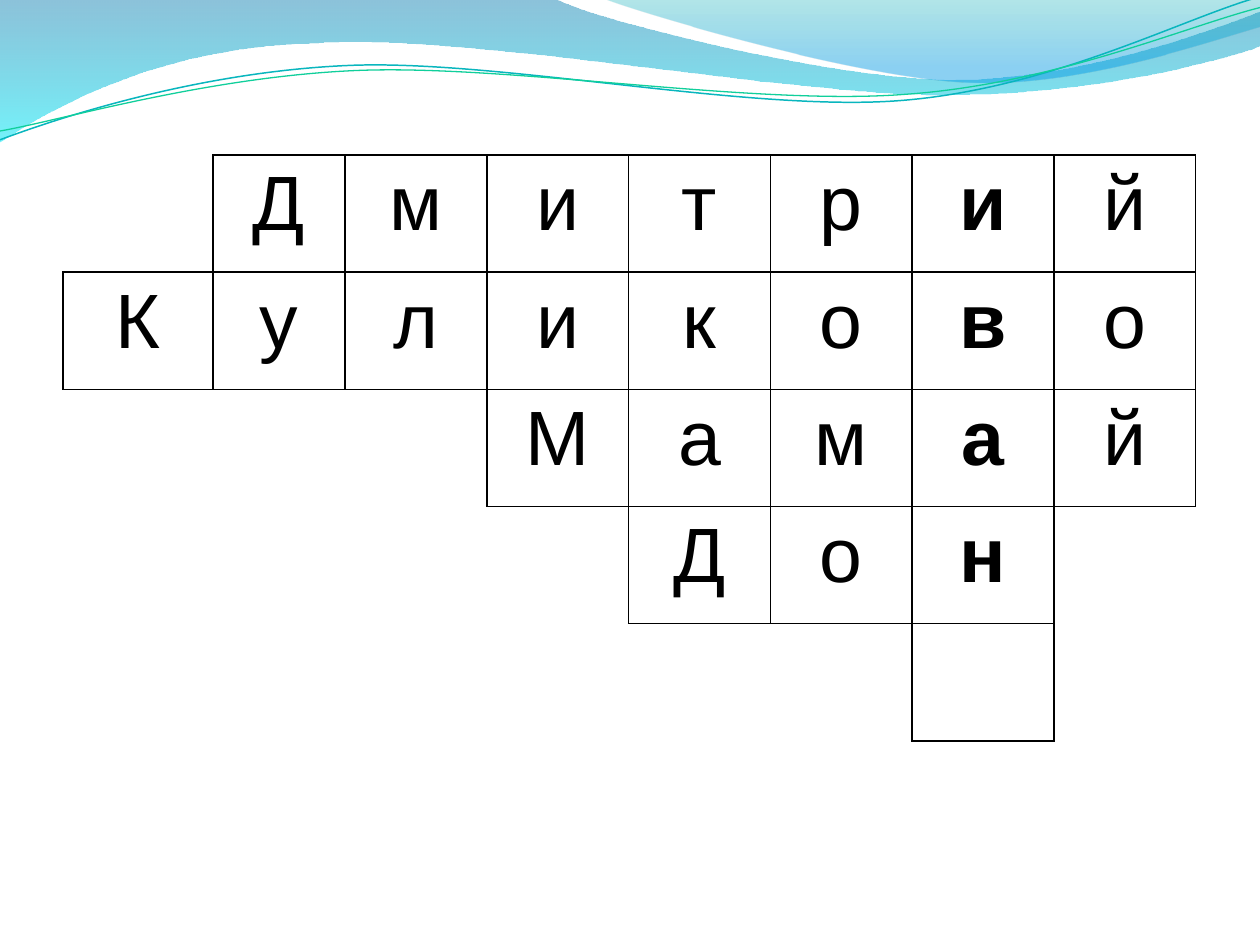
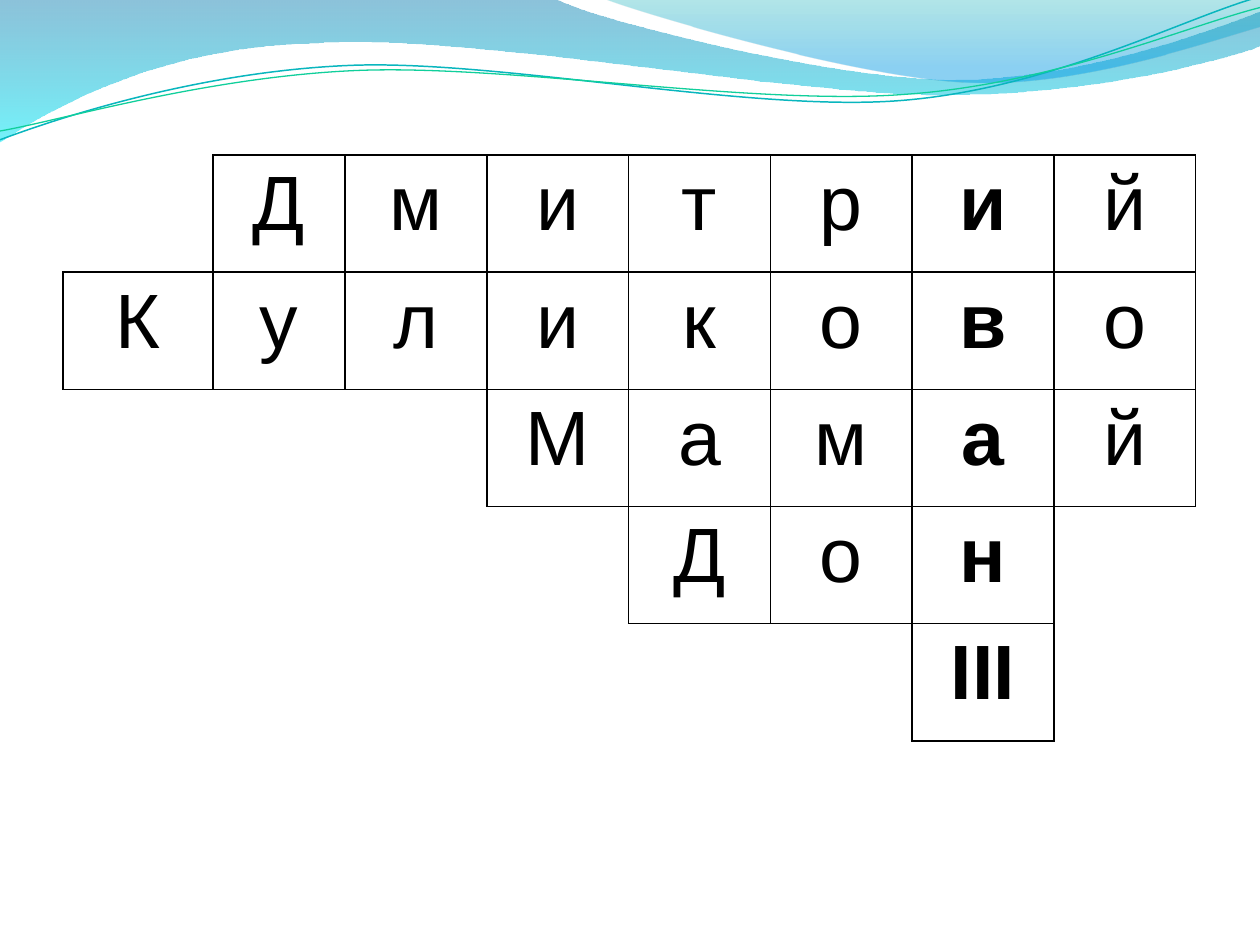
from lxml.etree import SubElement
from pptx import Presentation
from pptx.dml.color import RGBColor
from pptx.enum.text import PP_ALIGN
from pptx.oxml.ns import qn
from pptx.util import Inches, Pt

COLORS = {
    "ink": "000000",
    "deep_blue": "0079AD",
    "cyan": "00E9F7",
    "teal": "00ABB4",
    "sky": "0099E4",
    "teal_line": "09B6BE",
    "green_line": "10CF9B",
}
FONT = "Arial"
BLANK_LAYOUT = 6

# Each outline is a start point, then straight (1 point) or Bezier (3 points) pieces.
LEFT_WAVE = [
    [(0, 0)], [(4.4, -0.01)],
    [(4.76, 0.17), (6.64, 0.63), (7.58, 0.63)],
    [(8.53, 0.63), (9.58, 0.26), (10, 0.09)],
    [(10.01, 0.36)],
    [(9.83, 0.44), (8.7, 0.76), (7.46, 0.75)],
    [(6.22, 0.75), (3.82, 0.28), (2.57, 0.34)],
    [(1.29, 0.36), (0.46, 0.83), (-0.01, 1.13)],
    [(0, 0)],
]
RIGHT_WAVE = [
    [(4.79, -0.01)],
    [(5.09, 0.11), (6.82, 0.62), (7.69, 0.65)],
    [(8.56, 0.69), (9.61, 0.32), (10, 0.21)],
    [(10, 0)], [(4.79, -0.01)],
]
TEAL_CURVE = [
    [(0, 1.11)],
    [(0.48, 0.93), (1.58, 0.57), (2.77, 0.52)],
    [(3.95, 0.47), (5.93, 0.89), (7.13, 0.8)],
    [(8.33, 0.71), (9.38, 0.15), (9.98, -0.02)],
]
GREEN_CURVE = [
    [(0, 1.04)],
    [(0.47, 0.96), (1.64, 0.61), (2.83, 0.56)],
    [(4.03, 0.51), (5.97, 0.84), (7.17, 0.75)],
    [(8.36, 0.67), (9.41, 0.21), (10, 0.06)],
]

# First column of each answer, and the answer itself.
ANSWERS = [(1, "Дмитрий"), (0, "Куликово"), (3, "Мамай"), (4, "Дон")]
KEY_COLUMN = 6
GRID_LEFT, GRID_TOP, GRID_WIDTH = 0.5, 1.23, 8.99
FIRST_WIDTHS = [1.19, 1.05]
EQUAL_COLUMNS = 6
COLUMN_WIDTHS = FIRST_WIDTHS + [(GRID_WIDTH - sum(FIRST_WIDTHS)) / EQUAL_COLUMNS] * EQUAL_COLUMNS
ROW_HEIGHT = 0.93
SIDES = {"a:lnL": (0, -1), "a:lnR": (0, 1), "a:lnT": (-1, 0), "a:lnB": (1, 0)}


def rgb(name):
    return RGBColor.from_string(COLORS[name])


def add_outline(slide, outline, close):
    """Build a freeform through the end points, then bend its Bezier pieces."""
    ends = [(Inches(x), Inches(y)) for x, y in (piece[-1] for piece in outline)]
    builder = slide.shapes.build_freeform(*ends[0])
    builder.add_line_segments(ends[1:], close=close)
    shape = builder.convert_to_shape()
    shape.shadow.inherit = False
    segments = list(shape.element.iter(qn("a:lnTo")))
    for segment, piece in zip(segments, outline[1:]):
        if len(piece) == 3:
            segment.tag = qn("a:cubicBezTo")
            for index, (x, y) in enumerate(piece[:2]):
                point = segment.makeelement(qn("a:pt"), {
                    "x": str(Inches(x) - shape.left), "y": str(Inches(y) - shape.top)})
                segment.insert(index, point)
    return shape


def add_wave(slide, outline, stops):
    """Draw a filled wave; stops are (position, colour name, opacity percent)."""
    shape = add_outline(slide, outline, close=True)
    shape.line.fill.background()
    shape.fill.gradient()
    shape.fill.gradient_angle = 270
    for gradient_stop, (position, color, _) in zip(shape.fill.gradient_stops, stops):
        gradient_stop.position = position
        gradient_stop.color.rgb = rgb(color)
    for color_element, (_, _, opacity) in zip(shape.element.iter(qn("a:srgbClr")), stops):
        SubElement(color_element, qn("a:alpha"), val=str(opacity * 1000))
    return shape


def add_curve(slide, outline, color, width):
    shape = add_outline(slide, outline, close=False)
    shape.fill.background()
    shape.line.color.rgb = rgb(color)
    shape.line.width = Pt(width)
    return shape


def decorate_layout(layout, slide):
    """Draw the waves on a slide and move them to the layout all slides share."""
    waves = [
        add_wave(slide, LEFT_WAVE, [(0, "deep_blue", 45), (1, "cyan", 55)]),
        add_wave(slide, RIGHT_WAVE, [(0, "teal", 30), (0.8, "sky", 45)]),
        add_curve(slide, TEAL_CURVE, "teal_line", 0.85),
        add_curve(slide, GREEN_CURVE, "green_line", 0.75),
    ]
    for placeholder in list(layout.placeholders):
        layout.shapes.element.remove(placeholder.element)
    for wave in waves:
        layout.shapes.element.append(wave.element)


def set_border(cell, side, visible):
    properties = cell._tc.get_or_add_tcPr()
    line = SubElement(properties, qn(side), w=str(Pt(1)))
    if visible:
        fill = SubElement(line, qn("a:solidFill"))
        SubElement(fill, qn("a:srgbClr"), val=COLORS["ink"])
    else:
        SubElement(line, qn("a:noFill"))


def write_letter(cell, letter, bold):
    paragraph = cell.text_frame.paragraphs[0]
    paragraph.text = letter
    paragraph.alignment = PP_ALIGN.CENTER
    paragraph.font.name = FONT
    paragraph.font.size = Pt(44)
    paragraph.font.bold = bold
    paragraph.font.color.rgb = rgb("ink")


def add_crossword(slide, last_letter):
    letters = {(row, start + offset): letter
               for row, (start, answer) in enumerate(ANSWERS)
               for offset, letter in enumerate(answer)}
    row_count = len(ANSWERS) + 1
    letters[row_count - 1, KEY_COLUMN] = last_letter

    table = slide.shapes.add_table(
        row_count, len(COLUMN_WIDTHS), Inches(GRID_LEFT), Inches(GRID_TOP),
        Inches(GRID_WIDTH), Inches(ROW_HEIGHT * row_count)).table
    table.first_row = table.horz_banding = False
    for column, width in zip(table.columns, COLUMN_WIDTHS):
        column.width = Inches(width)

    for row in range(row_count):
        for column in range(len(COLUMN_WIDTHS)):
            cell = table.cell(row, column)
            for side, (down, right) in SIDES.items():
                neighbour = (row + down, column + right)
                set_border(cell, side, (row, column) in letters or neighbour in letters)
            cell.fill.background()
            if letters.get((row, column)):
                write_letter(cell, letters[row, column], column == KEY_COLUMN)


def main():
    presentation = Presentation()
    presentation.slide_width, presentation.slide_height = Inches(10), Inches(7.5)
    layout = presentation.slide_layouts[BLANK_LAYOUT]
    slides = [presentation.slides.add_slide(layout) for _ in range(2)]
    decorate_layout(layout, slides[0])
    for slide, last_letter in zip(slides, ["", "III"]):
        add_crossword(slide, last_letter)
    presentation.save("out.pptx")


if __name__ == "__main__":
    main()
